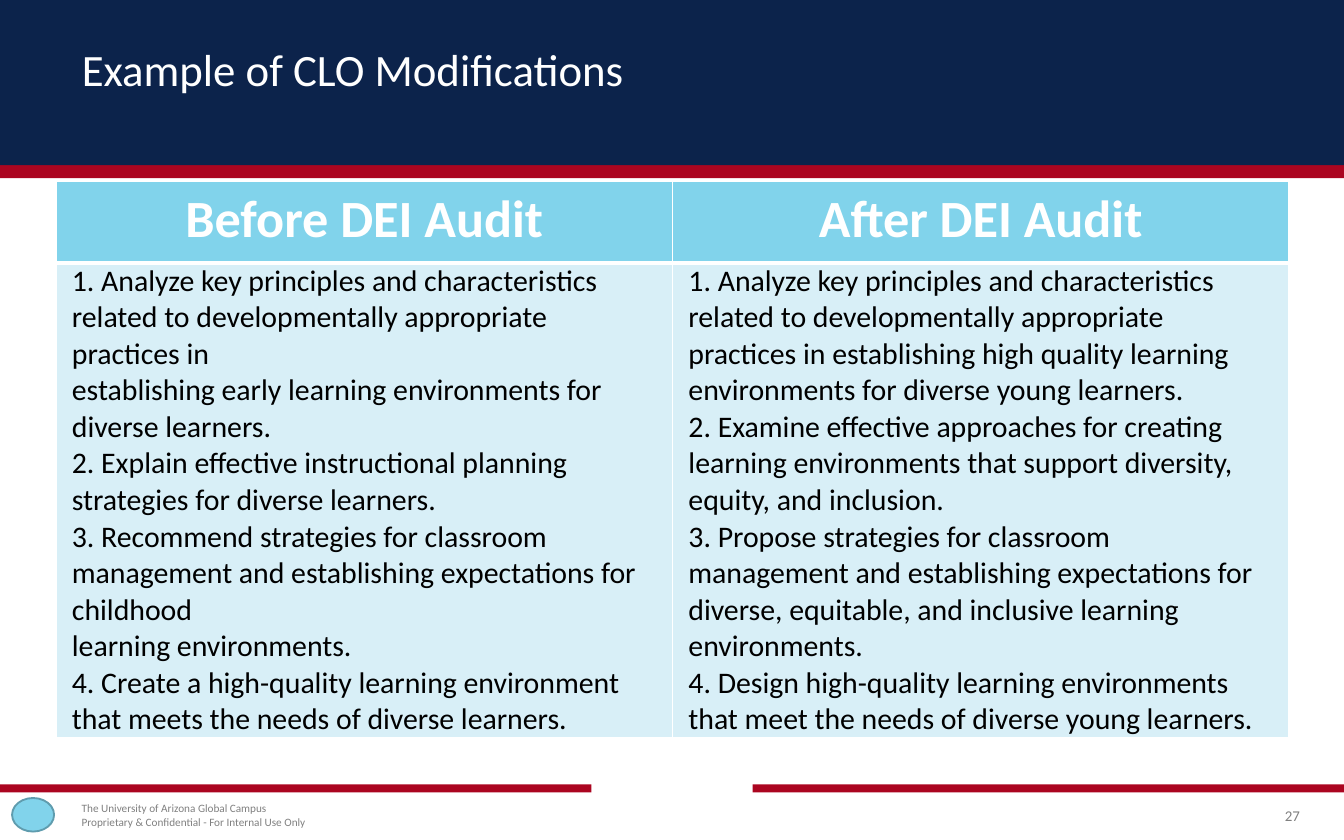
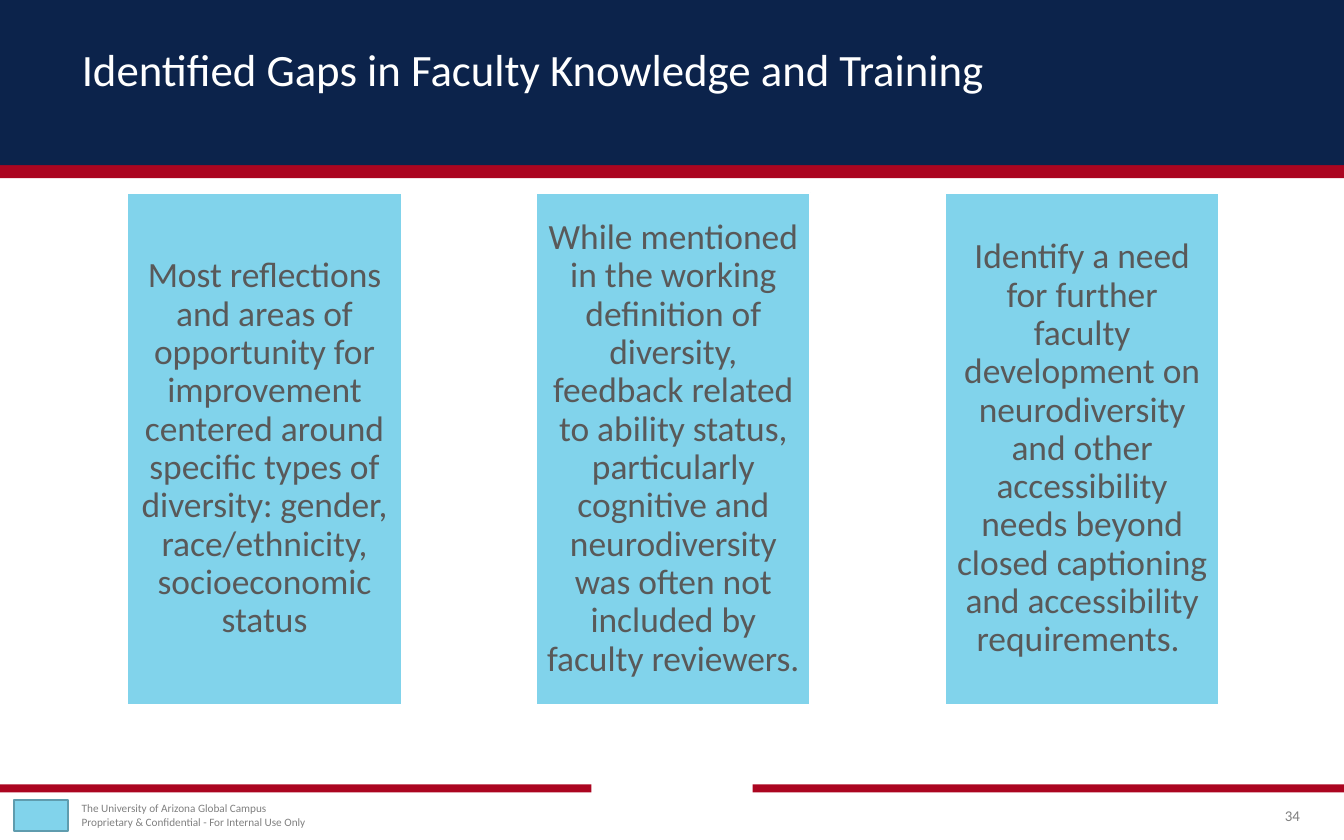
from lxml import etree
from pptx import Presentation
from pptx import util as u
from pptx.dml.color import RGBColor as Rgb
from pptx.enum import shapes, text
from pptx.oxml import ns

Pt = u.Pt
Kind = shapes.MSO_SHAPE
Side = text.PP_ALIGN
INK = {
    "navy": "0C234B",
    "red": "AB0520",
    "sky": "81D3EB",
    "pale": "D8EFF7",
    "edge": "5F9CAE",
    "white": "FFFFFF",
    "black": "000000",
    "gray": "808080",
    "dark": "595959",
}


def write(frame, lines, size=16, ink="black", bold=False, side=Side.LEFT,
          lead=None, pads=None):
    frame.word_wrap = True
    if pads:
        frame.vertical_anchor = text.MSO_ANCHOR.MIDDLE
        (frame.margin_left, frame.margin_top,
         frame.margin_right, frame.margin_bottom) = [Pt(p) for p in pads]
    for i, line in enumerate(lines):
        para = frame.paragraphs[0] if i == 0 else frame.add_paragraph()
        para.alignment = side
        if lead:
            para.line_spacing = lead
        run = para.add_run()
        run.text = line
        run.font.name = "Calibri"
        run.font.size = Pt(size)
        run.font.bold = bold
        run.font.color.rgb = Rgb.from_string(INK[ink])


def block(slide, kind, spot, fill, line=None):
    shape = slide.shapes.add_shape(kind, *[Pt(n) for n in spot])
    shape.shadow.inherit = False
    shape.fill.solid()
    shape.fill.fore_color.rgb = Rgb.from_string(INK[fill])
    if line:
        shape.line.color.rgb = Rgb.from_string(INK[line])
        shape.line.width = Pt(1)
    else:
        shape.line.fill.background()
    return shape


deck = Presentation()
deck.slide_width, deck.slide_height = Pt(720), Pt(450)

bands = [
    ((0, 0, 720, 95.5), "red"),
    ((0, 0, 720, 88.56), "navy"),
    ((0, 420.3, 316.8, 4.2), "red"),
    ((403.2, 420.3, 316.8, 4.2), "red"),
]
foot = [
    "The University of Arizona Global Campus",
    "Proprietary & Confidential - For Internal Use Only",
]
pages = [
    ("Example of CLO Modifications", "27",
     Kind.OVAL, (6.5, 427.5, 22.5, 18)),
    ("Identified Gaps in Faculty Knowledge and Training", "34",
     Kind.RECTANGLE, (7.6, 428.8, 29, 16.3)),
]

slides = []
for title, page, kind, spot in pages:
    slide = deck.slides.add_slide(deck.slide_layouts[6])
    slides.append(slide)
    for place, ink in bands:
        block(slide, Kind.RECTANGLE, place, ink)
    labels = [
        ((36.7, 427.7, 148.3, 18), foot,
         dict(size=6, ink="gray", pads=(7.2, 0, 0, 0))),
        ((36.7, 24.2, 647.3, 28.8), [title],
         dict(size=24, ink="white", lead=0.9, pads=(7.2,) * 4)),
        ((659.8, 427.7, 36.7, 18), [page],
         dict(size=8, ink="gray", side=Side.RIGHT, pads=(0,) * 4)),
    ]
    for place, lines, form in labels:
        box = slide.shapes.add_textbox(*[Pt(n) for n in place])
        write(box.text_frame, lines, **form)
    block(slide, kind, spot, "sky", "edge")

audit = {
    "Before DEI Audit": [
        "1. Analyze key principles and characteristics related to developmentally appropriate practices in",
        "establishing early learning environments for diverse learners.",
        "2. Explain effective instructional planning strategies for diverse learners.",
        "3. Recommend strategies for classroom management and establishing expectations for childhood",
        "learning environments.",
        "4. Create a high-quality learning environment that meets the needs of diverse learners.",
    ],
    "After DEI Audit": [
        "1. Analyze key principles and characteristics related to developmentally appropriate practices in establishing high quality learning environments for diverse young learners.",
        "2. Examine effective approaches for creating learning environments that support diversity, equity, and inclusion.",
        "3. Propose strategies for classroom management and establishing expectations for diverse, equitable, and inclusive learning environments.",
        "4. Design high-quality learning environments that meet the needs of diverse young learners.",
    ],
}
tall = [43.9, 254.6]
table = slides[0].shapes.add_table(
    2, 2, Pt(29.9), Pt(97), Pt(660.6), Pt(sum(tall))).table
for row, high in enumerate(tall):
    table.rows[row].height = Pt(high)
for col, (head, goals) in enumerate(audit.items()):
    table.columns[col].width = Pt(330.3)
    for row, fill in enumerate(["sky", "pale"]):
        cell = table.cell(row, col)
        props = cell._tc.get_or_add_tcPr()
        thick = "lnT" if row else "lnB"
        for edge in ["lnL", "lnR", "lnT", "lnB"]:
            wide = Pt(3 if edge == thick else 1)
            line = etree.SubElement(props, ns.qn("a:" + edge), w=str(wide))
            solid = etree.SubElement(line, ns.qn("a:solidFill"))
            etree.SubElement(solid, ns.qn("a:srgbClr"), val=INK["white"])
        cell.fill.solid()
        cell.fill.fore_color.rgb = Rgb.from_string(INK[fill])
    write(table.cell(0, col).text_frame, [head],
          size=28, ink="white", bold=True, side=Side.CENTER)
    body = table.cell(1, col)
    body.margin_left = body.margin_right = Pt(8.64)
    body.margin_top = body.margin_bottom = Pt(0)
    write(body.text_frame, goals)

gaps = [
    "Most reflections and areas of opportunity for improvement centered around specific types of diversity: gender, race/ethnicity, socioeconomic status",
    "While mentioned in the working definition of diversity, feedback related to ability status, particularly cognitive and neurodiversity was often not included by faculty reviewers.",
    "Identify a need for further faculty development on neurodiversity and other accessibility needs beyond closed captioning and accessibility requirements. ",
]
for i, gap in enumerate(gaps):
    card = block(slides[1], Kind.RECTANGLE,
                 (68.3 + 219 * i, 103.3, 146.9, 274.3), "sky", "white")
    write(card.text_frame, [gap], size=19, ink="dark",
          side=Side.CENTER, lead=0.9, pads=(5.7,) * 4)

deck.save("out.pptx")
